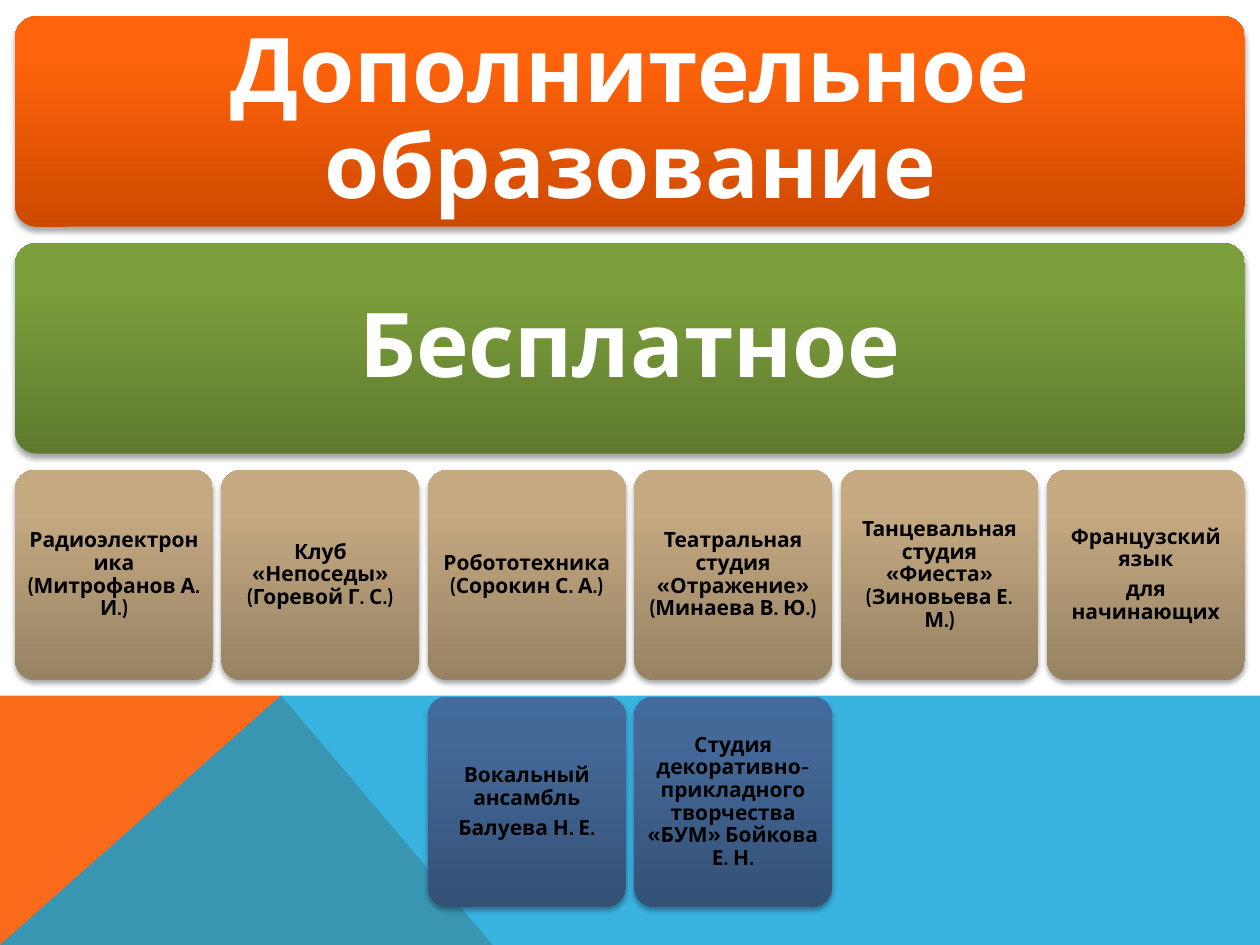
"""Build the slide on free extra classes as a chart of rounded tiles."""
from lxml.etree import SubElement
from pptx import Presentation
from pptx.dml.color import RGBColor
from pptx.enum.shapes import MSO_SHAPE
from pptx.enum.text import MSO_ANCHOR, PP_ALIGN
from pptx.oxml import parse_xml
from pptx.oxml.ns import nsdecls, qn
from pptx.util import Inches, Pt

HEAD = "Дополнительное образование"
KIND = "Бесплатное"
CLUBS = [
    "Радиоэлектроника (Митрофанов А. И.)",
    "Клуб «Непоседы»\v(Горевой Г. С.)",
    "Робототехника (Сорокин С. А.)",
    "Театральная студия «Отражение»\v(Минаева В. Ю.)",
    "Танцевальная студия «Фиеста» (Зиновьева Е. М.)",
    "Французский язык\nдля начинающих",
]
MORE = [
    "Вокальный ансамбль\nБалуева Н. Е.",
    "Студия декоративно-прикладного творчества «БУМ» Бойкова Е. Н.",
]
HUES = {"white": "FFFFFF", "black": "000000", "flame": "F96A1B", "sky": "08A1D9"}
FADES = {
    "orange": ("CE4900", "FF630C", "FF640E"),
    "green": ("5F7A2E", "7B9F3C", "7CA13B"),
    "tan": ("978263", "C4A981", "C6AA80"),
    "blue": ("345176", "446999", "426A9C"),
}
STOPS = (0, 80, 100)
FONT = "Cabin"
WIDE, HIGH = 10, 7.5
LEFT, TOP = 0.12, 0.13
FULL = WIDE - 2 * LEFT
TILE, TALL = 1.57, 1.67
STEP = (FULL - TILE) / (len(CLUBS) - 1)
DROP = 1.8
EDGE = 0.05
BASE, PEAK, FOOT = 5.52, 2.23, 3.91

deck = Presentation()
deck.slide_width, deck.slide_height = Inches(WIDE), Inches(HIGH)
slide = deck.slides.add_slide(deck.slide_layouts[5])
shapes = slide.shapes


def wedge(spots, hue, alpha=100):
    pts = [(Inches(x), Inches(y)) for x, y in spots]
    path = shapes.build_freeform(*pts[0])
    path.add_line_segments(pts[1:], close=True)
    shape = path.convert_to_shape()
    shape.shadow.inherit = False
    shape.fill.solid()
    shape.fill.fore_color.rgb = RGBColor.from_string(HUES[hue])
    shape.line.fill.background()
    if alpha < 100:
        color = shape.element.spPr.find(qn("a:solidFill"))[0]
        SubElement(color, qn("a:alpha"), val=str(alpha * 1000))


def write(shape, text, size, inset, hue):
    frame = shape.text_frame
    frame.text = text
    frame.word_wrap = True
    frame.vertical_anchor = MSO_ANCHOR.MIDDLE
    frame.margin_left = frame.margin_right = Inches(inset)
    frame.margin_top = frame.margin_bottom = Inches(inset)
    for para in frame.paragraphs:
        para.alignment = PP_ALIGN.CENTER
        para.line_spacing = 0.9
        para.space_after = Pt(size * 0.35)
        for run in para.runs:
            run.font.name, run.font.size, run.font.bold = FONT, Pt(size), True
            run.font.color.rgb = RGBColor.from_string(HUES[hue])


def tile(row, col, width, fade):
    shape = shapes.add_shape(
        MSO_SHAPE.ROUNDED_RECTANGLE, Inches(LEFT + col * STEP),
        Inches(TOP + row * DROP), Inches(width), Inches(TALL))
    shape.adjustments[0] = 0.1
    stops = "".join(
        f'<a:gs pos="{pos * 1000}"><a:srgbClr val="{hue}"/></a:gs>'
        for pos, hue in zip(STOPS, FADES[fade]))
    props = shape.element.spPr
    props.append(parse_xml(
        f'<a:gradFill {nsdecls("a")} rotWithShape="1"><a:gsLst>{stops}</a:gsLst>'
        '<a:lin ang="16200000" scaled="0"/></a:gradFill>'))
    shape.line.fill.background()
    props.append(parse_xml(
        f'<a:effectLst {nsdecls("a")}><a:outerShdw blurRad="{Pt(3.1)}" '
        f'dist="{Pt(1.8)}" dir="5400000" rotWithShape="0">'
        f'<a:srgbClr val="{HUES["black"]}"><a:alpha val="35000"/></a:srgbClr>'
        '</a:outerShdw></a:effectLst>'))
    return shape


wedge([(0, HIGH), (0, BASE), (PEAK, BASE), (FOOT, HIGH)], "flame")
wedge([(0, HIGH), (PEAK, BASE), (WIDE, BASE), (WIDE, HIGH)], "sky", 80)

tile(0, 0, FULL, "orange")
title = shapes.title
title.left, title.top = Inches(LEFT + EDGE), Inches(TOP + EDGE)
title.width, title.height = Inches(FULL - 2 * EDGE), Inches(TALL - 2 * EDGE)
title.element.getparent().append(title.element)
write(title, HEAD, 51, 0.21, "white")
write(tile(1, 0, FULL, "green"), KIND, 51, 0.21, "white")

for row, first, names, fade in ((2, 0, CLUBS, "tan"), (3, 2, MORE, "blue")):
    for col, name in enumerate(names, first):
        write(tile(row, col, TILE, fade), name, 12, EDGE, "black")

deck.save("out.pptx")
